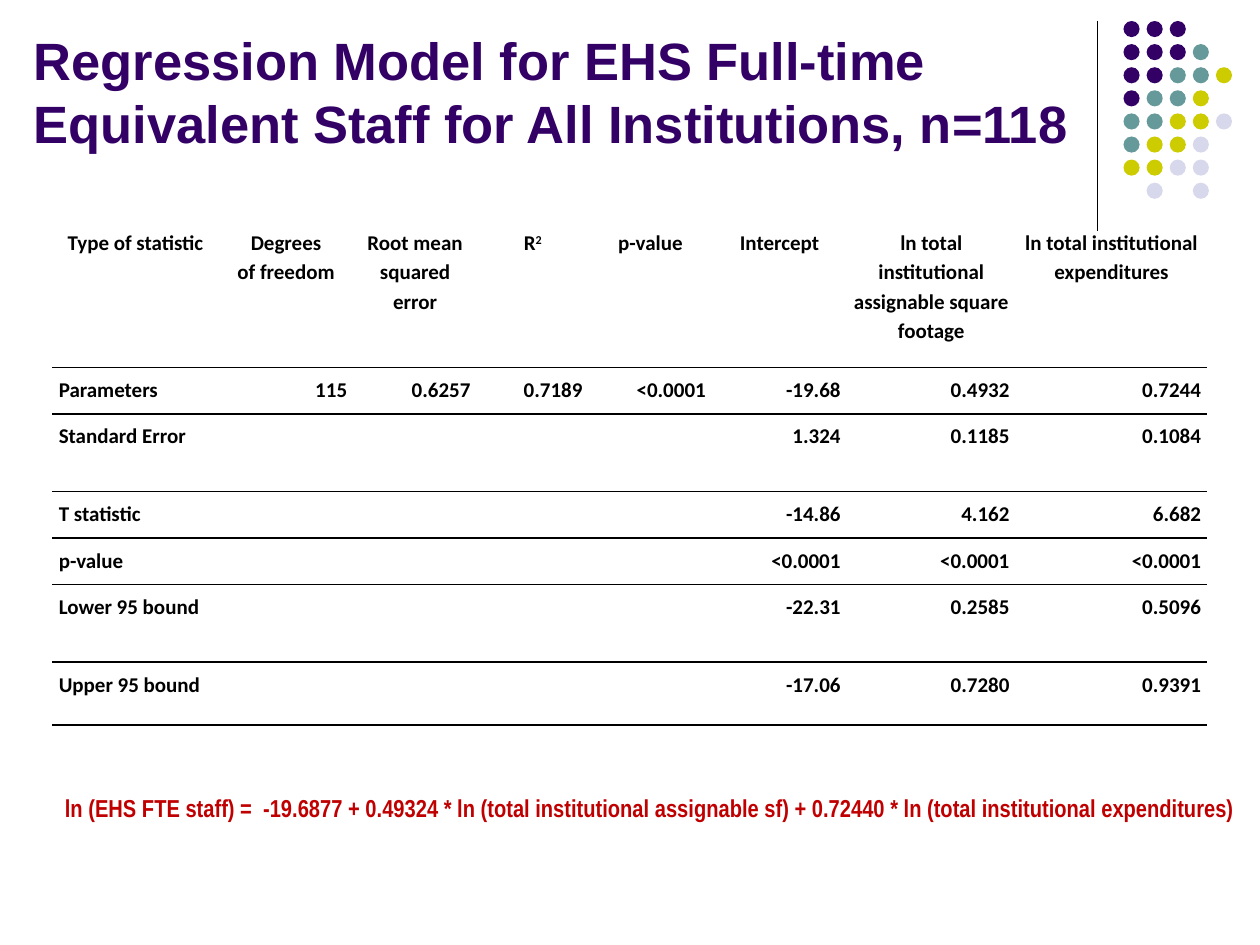
import pptx
import pptx.dml.color
import pptx.enum.shapes
import pptx.enum.text
import pptx.oxml
import pptx.oxml.ns
import pptx.util
from lxml import etree

Pt = pptx.util.Pt
ALIGN = pptx.enum.text.PP_ALIGN
SHAPE = pptx.enum.shapes.MSO_SHAPE
qn = pptx.oxml.ns.qn

DOT_COLORS = {"P": "330066", "T": "669999", "Y": "CCCC00", "L": "D8D8EC"}
DOT_ROWS = ["PPP", "PPPT", "PPTTY", "PTTY", "TTYYL", "TYYL", "YYLL", " L L"]

COL_WIDTHS = [95, 77, 70.5, 64, 70.5, 77, 96.5, 109.5]
ROW_HEIGHTS = [84, 26.5, 44.5, 26.5, 26.5, 44.5, 36]
HEADERS = [
    "Type of statistic", "Degrees\vof freedom", "Root mean squared\verror", "R",
    "p-value", "Intercept", "ln total institutional assignable square footage",
    "ln total institutional expenditures",
]
GAP = [""] * 4
STATISTICS = [
    ["Parameters", "115", "0.6257", "0.7189", "<0.0001", "-19.68", "0.4932", "0.7244"],
    ["Standard Error", *GAP, "1.324", "0.1185", "0.1084"],
    ["T statistic", *GAP, "-14.86", "4.162", "6.682"],
    ["p-value", *GAP, "<0.0001", "<0.0001", "<0.0001"],
    ["Lower 95 bound", *GAP, "-22.31", "0.2585", "0.5096"],
    ["Upper 95 bound", *GAP, "-17.06", "0.7280", "0.9391"],
]


def rgb(color):
    return pptx.dml.color.RGBColor.from_string(color)


def set_font(font, name, size, color):
    font.name = name
    font.size = Pt(size)
    font.bold = True
    font.color.rgb = rgb(color)


def add_title(s, text):
    sp = s.shapes.title
    sp.left, sp.top, sp.width, sp.height = Pt(12), Pt(6), Pt(612), Pt(85.5)
    tf = sp.text_frame
    tf.text = text
    tf.auto_size = pptx.enum.text.MSO_AUTO_SIZE.NONE
    tf.vertical_anchor = pptx.enum.text.MSO_ANCHOR.BOTTOM
    p = tf.paragraphs[0]
    p.alignment = ALIGN.LEFT
    set_font(p.font, "Arial", 30, "330066")


def add_rule(s, x, top, bottom):
    line = s.shapes.add_connector(
        pptx.enum.shapes.MSO_CONNECTOR.STRAIGHT, Pt(x), Pt(top), Pt(x), Pt(bottom))
    line.line.color.rgb = rgb("000000")
    line.line.width = Pt(0.75)
    etree.SubElement(line._element.spPr, qn("a:effectLst"))


def add_dots(s, left, top, pitch, size):
    group = s.shapes.add_group_shape()
    for i, row in enumerate(DOT_ROWS):
        for j, key in enumerate(row):
            if key == " ":
                continue
            sp = group.shapes.add_shape(
                SHAPE.OVAL, Pt(left + j * pitch), Pt(top + i * pitch), Pt(size), Pt(size))
            sp.shadow.inherit = False
            sp.fill.solid()
            sp.fill.fore_color.rgb = rgb(DOT_COLORS[key])
            sp.line.fill.background()


def add_bottom_border(cell):
    ln = etree.SubElement(cell._tc.get_or_add_tcPr(), qn("a:lnB"), w=str(Pt(1)))
    fill = etree.SubElement(ln, qn("a:solidFill"))
    etree.SubElement(fill, qn("a:srgbClr"), val="000000")


def fill_cell(cell, text, alignment):
    cell.margin_left = cell.margin_right = Pt(3.6)
    cell.margin_top = cell.margin_bottom = Pt(3.6)
    add_bottom_border(cell)
    cell.fill.background()
    cell.text = text
    p = cell.text_frame.paragraphs[0]
    p.alignment = alignment
    p.line_spacing = 1.15
    set_font(p.font, "Calibri", 12, "000000")
    if not text:
        p._p.get_or_add_endParaRPr().set("sz", "1200")


def add_statistics_table(s, left, top):
    rows = [HEADERS, *STATISTICS]
    frame = s.shapes.add_table(
        len(rows), len(HEADERS), Pt(left), Pt(top),
        Pt(sum(COL_WIDTHS)), Pt(sum(ROW_HEIGHTS)))
    table = frame.table
    table.first_row = table.horz_banding = False
    style = table._tbl.tblPr.find(qn("a:tableStyleId"))
    style.text = "{2D5ABB26-0587-4C30-8999-92F81FD0307C}"
    for column, width in zip(table.columns, COL_WIDTHS):
        column.width = Pt(width)
    for row, height in zip(table.rows, ROW_HEIGHTS):
        row.height = Pt(height)
    for i, row in enumerate(rows):
        for j, text in enumerate(row):
            body = ALIGN.RIGHT if j else ALIGN.LEFT
            fill_cell(table.cell(i, j), text, body if i else ALIGN.CENTER)
    r = table.cell(0, HEADERS.index("R")).text_frame.paragraphs[0].add_run()
    r.text = "2"
    r.font._element.set("baseline", "30000")


def add_equation(s, text):
    sp = s.shapes.add_textbox(Pt(30), Pt(449.5), Pt(696), Pt(41))
    tf = sp.text_frame
    tf.word_wrap = True
    tf.text = text
    set_font(tf.paragraphs[0].font, "Arial Narrow", 14, "C00000")


def main():
    prs = pptx.Presentation()
    prs.slide_width, prs.slide_height = Pt(720), Pt(540)
    s = prs.slides.add_slide(prs.slide_layouts[5])
    add_rule(s, 627, 12, 132)
    add_dots(s, 642, 12, 13.2, 9.2)
    add_title(s, "Regression Model for EHS Full-time Equivalent Staff "
                 "for All Institutions, n=118")
    add_statistics_table(s, 30, 126)
    add_equation(s, "ln (EHS FTE staff) =  -19.6877 + 0.49324 * ln (total institutional "
                    "assignable sf) + 0.72440 * ln (total institutional expenditures)")
    prs.save("out.pptx")


if __name__ == "__main__":
    main()
